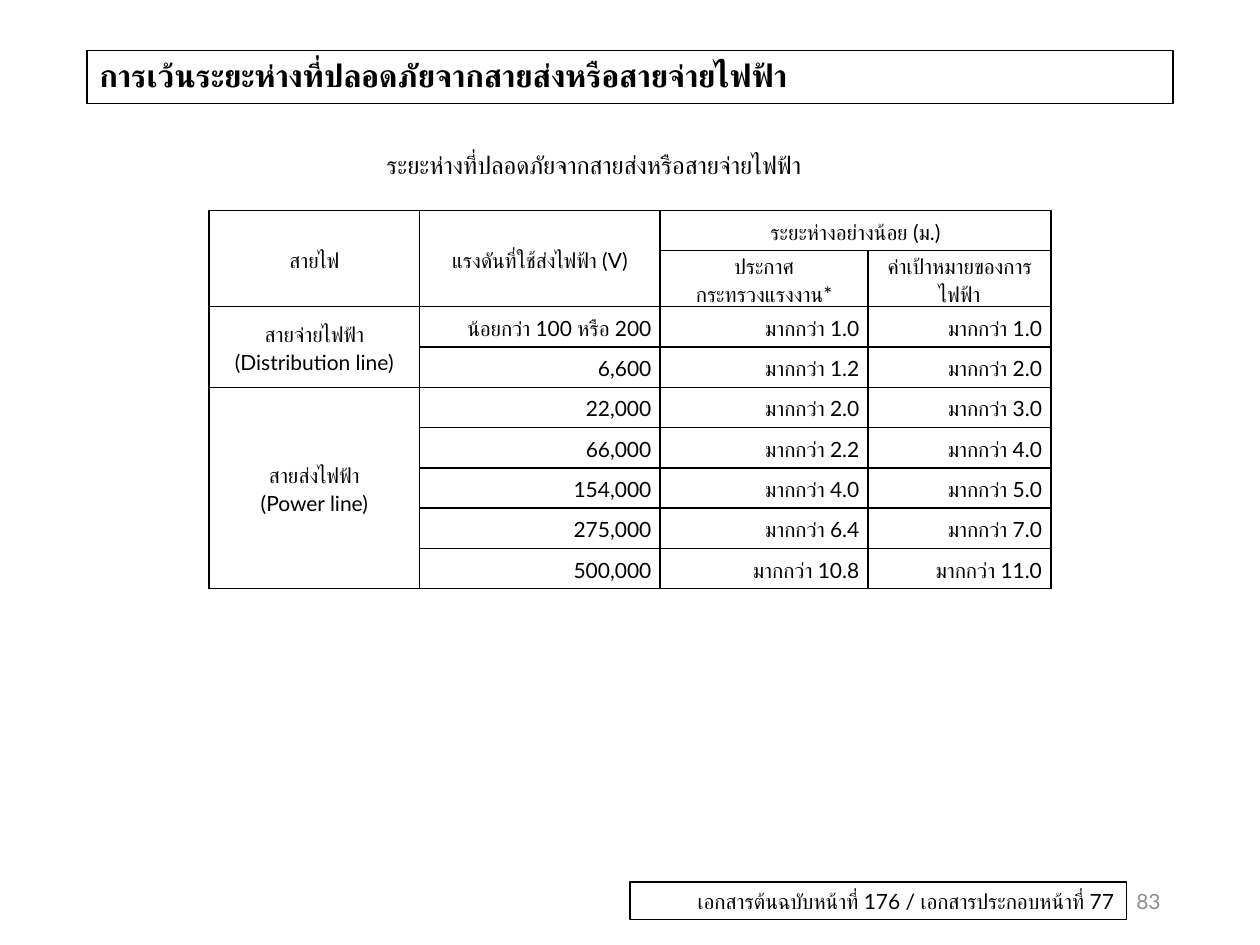
from pptx import Presentation
from pptx.dml.color import RGBColor
from pptx.enum.shapes import MSO_SHAPE
from pptx.enum.text import MSO_ANCHOR, PP_ALIGN
from pptx.oxml import parse_xml
from pptx.oxml.ns import nsdecls
from pptx.util import Inches, Pt

BLACK = RGBColor(0x00, 0x00, 0x00)
GRAY = RGBColor(0x8C, 0x8C, 0x8C)
FONT = "Lato"
RECT = MSO_SHAPE.RECTANGLE
TOP, MIDDLE = MSO_ANCHOR.TOP, MSO_ANCHOR.MIDDLE
LEFT, CENTER, RIGHT = PP_ALIGN.LEFT, PP_ALIGN.CENTER, PP_ALIGN.RIGHT

MORE = "มากกว่า "
COLS = [1.67, 1.91, 1.65, 1.45]
ROW = 0.32
HEADS = [
    (0, 0, 1, 0, "สายไฟ"),
    (0, 1, 1, 1, "แรงดันที่ใช้ส่งไฟฟ้า (V)"),
    (0, 2, 0, 3, "ระยะห่างอย่างน้อย (ม.)"),
    (1, 2, 1, 2, "ประกาศ\nกระทรวงแรงงาน*"),
    (1, 3, 1, 3, "ค่าเป้าหมายของการไฟฟ้า"),
    (2, 0, 3, 0, "สายจ่ายไฟฟ้า\n(Distribution line)"),
    (4, 0, 8, 0, "สายส่งไฟฟ้า\n(Power line)"),
]
LIMITS = [
    ("น้อยกว่า 100 หรือ 200", "1.0", "1.0"),
    ("6,600", "1.2", "2.0"),
    ("22,000", "2.0", "3.0"),
    ("66,000", "2.2", "4.0"),
    ("154,000", "4.0", "5.0"),
    ("275,000", "6.4", "7.0"),
    ("500,000", "10.8", "11.0"),
]


def write(frame, text, size=12, color=BLACK, bold=False, align=LEFT,
          anchor=TOP, wrap=True, space=None):
    frame.word_wrap = wrap
    frame.vertical_anchor = anchor
    for i, line in enumerate(text.split("\n")):
        para = frame.add_paragraph() if i else frame.paragraphs[0]
        para.alignment = align
        para.line_spacing = space
        run = para.add_run()
        run.text = line
        font = run.font
        font.name, font.size, font.bold = FONT, Pt(size), bold
        font.color.rgb = color


def add_frame(slide, box, text, **style):
    """Add an unfilled box with a thin black outline."""
    shape = slide.shapes.add_shape(RECT, *map(Inches, box))
    shape.shadow.inherit = False
    shape.fill.background()
    shape.line.color.rgb = BLACK
    shape.line.width = Pt(0.75)
    write(shape.text_frame, text, **style)


def add_label(slide, box, text, **style):
    label = slide.shapes.add_textbox(*map(Inches, box))
    write(label.text_frame, text, **style)


def add_borders(cell):
    props = cell._tc.get_or_add_tcPr()
    for i, side in enumerate(("lnL", "lnR", "lnT", "lnB")):
        props.insert(i, parse_xml(
            f'<a:{side} {nsdecls("a")} w="{Pt(1)}"><a:solidFill>'
            f'<a:srgbClr val="{BLACK}"/></a:solidFill></a:{side}>'))


def fill_cell(cell, text, align):
    cell.vertical_anchor = MIDDLE
    write(cell.text_frame, text, align=align, space=Pt(16))


def add_grid(slide):
    count = len(LIMITS) + 2
    box = (1.66, 1.67, sum(COLS), ROW * count)
    table = slide.shapes.add_table(
        count, len(COLS), *map(Inches, box)).table
    table.first_row = table.horz_banding = False
    for col, width in zip(table.columns, COLS):
        col.width = Inches(width)
    for row in table.rows:
        row.height = Inches(ROW)
    for cell in table.iter_cells():
        cell.fill.background()
        cell.margin_left = cell.margin_right = Inches(0.07)
        cell.margin_top = cell.margin_bottom = 0
        add_borders(cell)
    for top, left, bottom, right, text in HEADS:
        cell = table.cell(top, left)
        if (top, left) != (bottom, right):
            cell.merge(table.cell(bottom, right))
        fill_cell(cell, text, CENTER)
    for r, (volts, law, goal) in enumerate(LIMITS, 2):
        for c, text in enumerate((volts, MORE + law, MORE + goal), 1):
            fill_cell(table.cell(r, c), text, RIGHT)


def main():
    deck = Presentation()
    deck.slide_width, deck.slide_height = Inches(10), Inches(7.5)
    slide = deck.slides.add_slide(deck.slide_layouts[6])
    add_frame(slide, (0.69, 0.4, 8.62, 0.42),
              "การเว้นระยะห่างที่ปลอดภัยจากสายส่งหรือสายจ่ายไฟฟ้า",
              size=18, bold=True, anchor=MIDDLE, space=0.9)
    add_frame(slide, (5, 7, 3.94, 0.3),
              "เอกสารต้นฉบับหน้าที่ 176 / เอกสารประกอบหน้าที่ 77",
              align=RIGHT)
    add_label(slide, (7.06, 6.95, 2.25, 0.4), "83",
              color=GRAY, align=RIGHT, anchor=MIDDLE)
    add_label(slide, (2.97, 1.14, 4.07, 0.34),
              "ระยะห่างที่ปลอดภัยจากสายส่งหรือสายจ่ายไฟฟ้า",
              size=14, wrap=False)
    add_grid(slide)
    deck.save("out.pptx")


if __name__ == "__main__":
    main()
